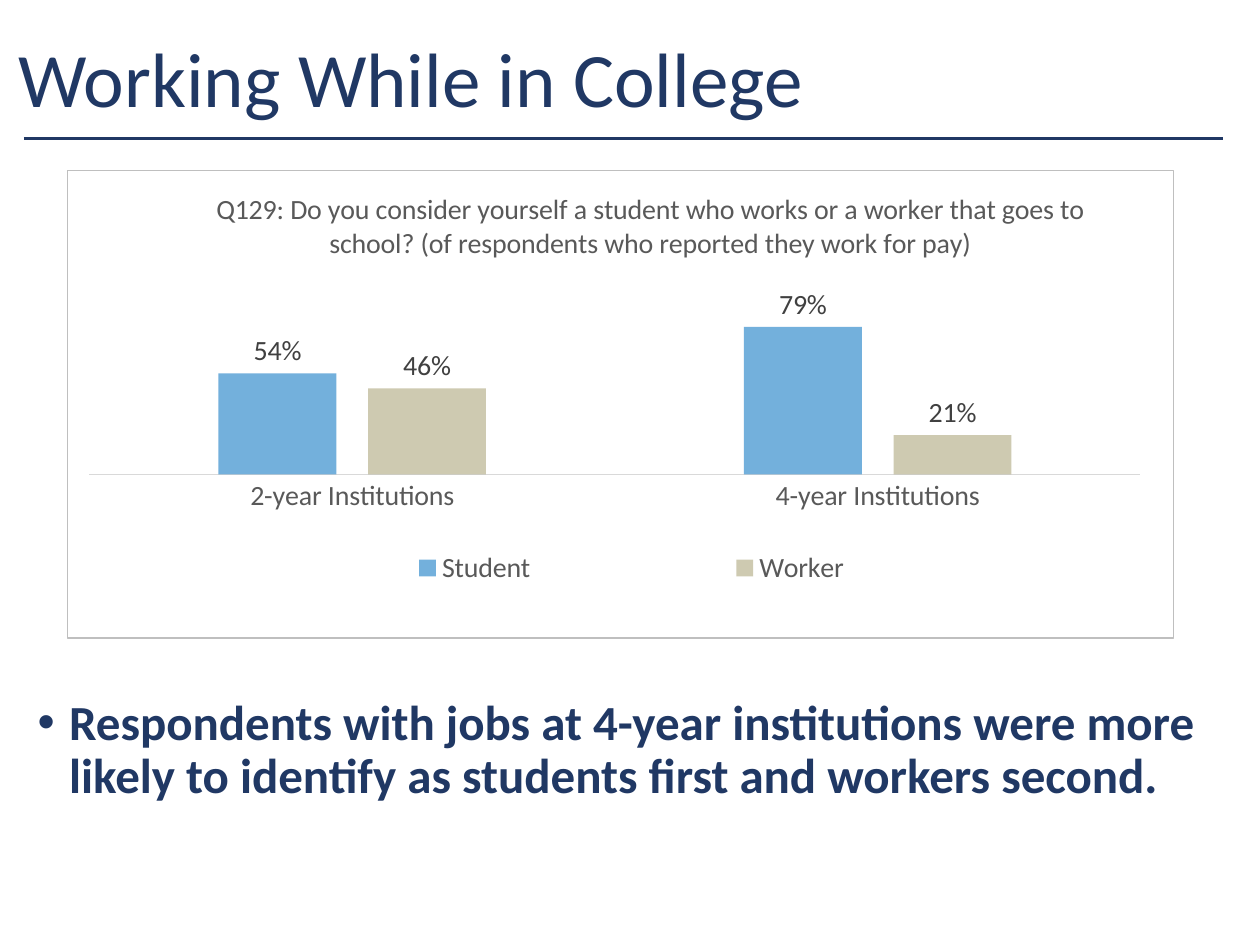
from lxml import etree
from pptx import Presentation
from pptx.chart.data import CategoryChartData
from pptx.dml.color import RGBColor
from pptx.enum.chart import XL_CHART_TYPE as ChartType
from pptx.enum.chart import XL_LABEL_POSITION as LabelPos
from pptx.enum.chart import XL_LEGEND_POSITION as LegendPos
from pptx.enum.chart import XL_TICK_LABEL_POSITION as TickLabelPos
from pptx.enum.chart import XL_TICK_MARK as TickMark
from pptx.enum.shapes import MSO_CONNECTOR as Connector
from pptx.enum.text import MSO_ANCHOR as Anchor
from pptx.oxml import parse_xml
from pptx.oxml.ns import nsdecls, qn
from pptx.util import Inches, Pt

NAVY = RGBColor(0x20, 0x38, 0x64)
BLUE = RGBColor(0x00, 0x70, 0xC0)
TAN = RGBColor(0x94, 0x8A, 0x54)
GREY = RGBColor(0x59, 0x59, 0x59)
DARK = RGBColor(0x40, 0x40, 0x40)
AXIS = RGBColor(0xD9, 0xD9, 0xD9)
FONT = "Calibri"
PERCENT = '0"%"'


def set_font(font, size, color, bold=False):
    font.name, font.size, font.bold = FONT, Pt(size), bold
    font.color.rgb = color


def add_text(slide, box, text, size, bold=False, anchor=Anchor.TOP, bullet=False):
    tf = slide.shapes.add_textbox(*map(Inches, box)).text_frame
    tf.word_wrap = True
    tf.vertical_anchor = anchor
    p = tf.paragraphs[0]
    p.line_spacing = 0.9
    if bullet:
        pPr = p._p.get_or_add_pPr()
        pPr.set("marL", str(Inches(0.25)))
        pPr.set("indent", str(Inches(-0.25)))
        etree.SubElement(pPr, qn("a:buFont")).set("typeface", "Arial")
        etree.SubElement(pPr, qn("a:buChar")).set("char", "•")
    r = p.add_run()
    r.text = text
    set_font(r.font, size, NAVY, bold)


def add_heading(slide, box):
    add_text(slide, box, "Working While in College", 44, anchor=Anchor.MIDDLE)
    # Rule under the title
    line = slide.shapes.add_connector(
        Connector.STRAIGHT, Inches(0.19), Inches(1.1), Inches(9.71), Inches(1.1))
    line.line.color.rgb = NAVY
    line.line.width = Pt(1.75)
    etree.SubElement(line._element.spPr, qn("a:effectLst"))


def place(element, index, x, y, w=None, h=None, inner=False):
    """Give a chart part a manual layout, in fractions of the chart."""
    for old in element.findall(qn("c:layout")):
        element.remove(old)
    layout = etree.Element(qn("c:layout"))
    manual = etree.SubElement(layout, qn("c:manualLayout"))
    values = [("layoutTarget", "inner" if inner else None),
              ("xMode", "edge"), ("yMode", "edge"),
              ("x", x), ("y", y), ("w", w), ("h", h)]
    for tag, value in values:
        if value is not None:
            etree.SubElement(manual, qn("c:" + tag)).set("val", str(value))
    element.insert(index, layout)


def style_series(series, color, alpha):
    fill = series.format.fill
    fill.solid()
    fill.fore_color.rgb = color
    clr = series._element.spPr.find(".//" + qn("a:srgbClr"))
    etree.SubElement(clr, qn("a:alpha")).set("val", str(alpha * 1000))
    labels = series.data_labels
    labels.show_value = True
    labels.position = LabelPos.OUTSIDE_END
    labels.number_format = PERCENT
    labels.number_format_is_linked = False
    set_font(labels.font, 16, DARK)


def add_survey_chart(slide, box):
    data = CategoryChartData(number_format=PERCENT)
    data.categories = ["2-year Institutions", "4-year Institutions"]
    data.add_series("Student", [54, 79])
    data.add_series("Worker", [46, 21])
    chart = slide.shapes.add_chart(
        ChartType.COLUMN_CLUSTERED, *map(Inches, box), data).chart
    chart.font.name, chart.font.size = FONT, Pt(10)

    # Frame
    border = parse_xml(
        f'<c:spPr {nsdecls("c", "a")}><a:noFill/><a:ln w="{Pt(0.75)}"><a:solidFill>'
        '<a:srgbClr val="BFBFBF"/></a:solidFill></a:ln></c:spPr>')
    chart._chartSpace.find(qn("c:txPr")).addprevious(border)

    # Title
    chart.has_title = True
    title = chart.chart_title
    r = title.text_frame.paragraphs[0].add_run()
    r.text = ("Q129: Do you consider yourself a student who works or a worker "
              "that goes to school? (of respondents who reported they work for pay)")
    set_font(r.font, 16, GREY)
    title.include_in_layout = False
    place(title._element, 1, 0.13, 0.03)

    # Columns
    plot = chart.plots[0]
    plot.gap_width, plot.overlap = 219, -27
    plot.vary_by_categories = False
    for series, (color, alpha) in zip(plot.series, [(BLUE, 55), (TAN, 45)]):
        style_series(series, color, alpha)
    place(chart._chartSpace.chart.plotArea, 0, 0.02, 0.29, 0.95, 0.36, inner=True)

    # Axes
    cat, val = chart.category_axis, chart.value_axis
    for axis in (cat, val):
        axis.has_major_gridlines = False
        axis.major_tick_mark = axis.minor_tick_mark = TickMark.NONE
    set_font(cat.tick_labels.font, 16, GREY)
    cat.format.line.color.rgb = AXIS
    cat.format.line.width = Pt(0.75)
    val.minimum_scale, val.maximum_scale = 0, 90
    val.tick_label_position = TickLabelPos.NONE
    val.format.line.fill.background()

    # Legend
    chart.has_legend = True
    legend = chart.legend
    legend.position = LegendPos.BOTTOM
    legend.include_in_layout = False
    set_font(legend.font, 16, GREY)
    place(legend._element, 1, 0.14, 0.78, 0.74, 0.14)


def main():
    prs = Presentation()
    prs.slide_width, prs.slide_height = Inches(10), Inches(7.5)
    slide = prs.slides.add_slide(prs.slide_layouts[6])
    add_heading(slide, (0.05, 0.22, 8.62, 0.87))
    add_survey_chart(slide, (0.53, 1.35, 8.79, 3.72))
    # Takeaway
    add_text(slide, (0.2, 5.49, 9.69, 1.33),
             "Respondents with jobs at 4-year institutions were more likely to "
             "identify as students first and workers second.",
             28, bold=True, bullet=True)
    prs.save("out.pptx")


if __name__ == "__main__":
    main()
